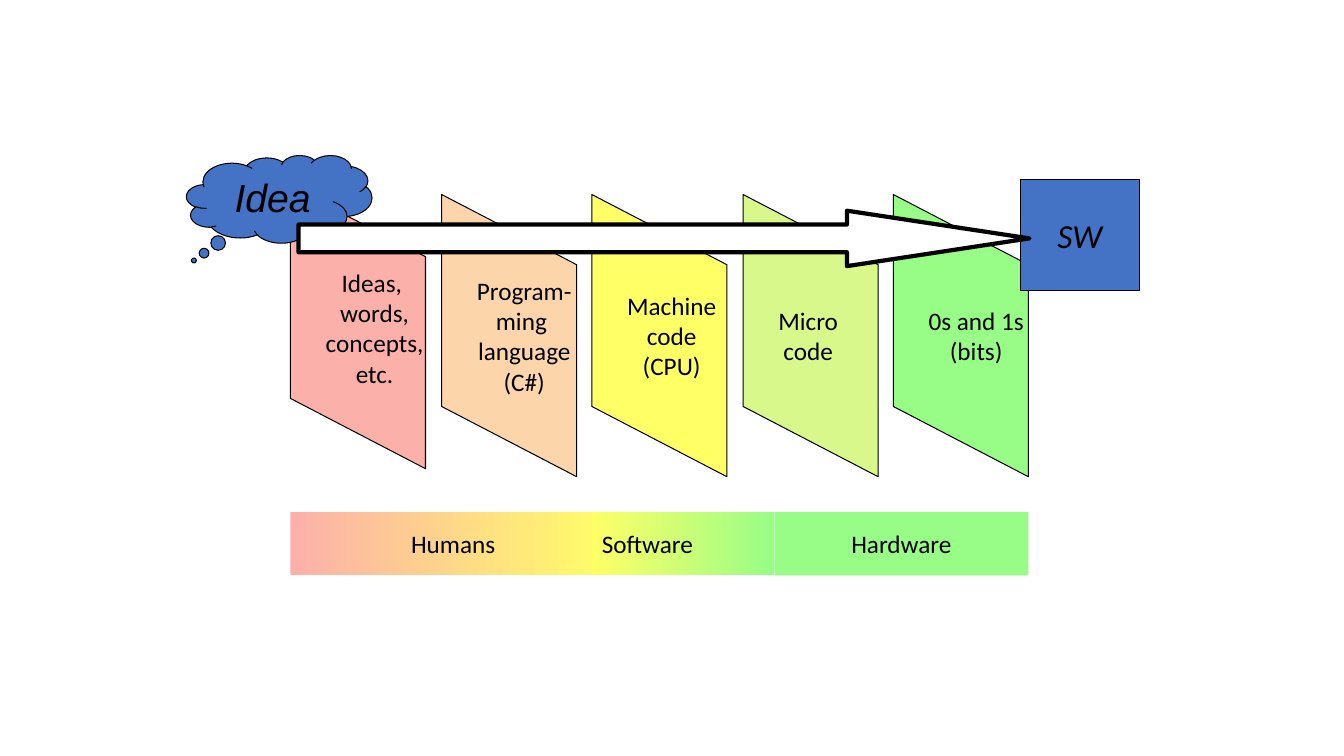
from dataclasses import dataclass

from pptx import Presentation
from pptx.dml.color import RGBColor
from pptx.enum.shapes import MSO_SHAPE
from pptx.enum.text import MSO_ANCHOR, PP_ALIGN
from pptx.util import Emu, Pt

PX = 9144  # EMU per px, 100 px to the inch

COLORS = {
    "black": "000000",
    "white": "FFFFFF",
    "blue": "4472C4",
    "red": "FCB0AA",
    "orange": "FCD5AA",
    "yellow": "FFFF66",
    "lime": "D9F88C",
    "green": "98FD87",
}


@dataclass
class Box:
    kind: MSO_SHAPE
    x: int
    y: int
    w: int
    h: int
    fill: tuple[str, ...]  # two colours make a gradient
    text: str = ""
    line: float = 0.75
    adjust: tuple[float, ...] = ()
    size: int = 18
    font: str = "Calibri"
    italic: bool = False
    align: PP_ALIGN = PP_ALIGN.CENTER
    anchor: MSO_ANCHOR = MSO_ANCHOR.MIDDLE
    wrap: bool = False


def rgb(name: str) -> RGBColor:
    return RGBColor.from_string(COLORS[name])


def paint(s, box: Box) -> None:
    if len(box.fill) == 1:
        s.fill.solid()
        s.fill.fore_color.rgb = rgb(box.fill[0])
    else:
        s.fill.gradient()
        s.fill.gradient_angle = 0
        for i, (stop, name) in enumerate(zip(s.fill.gradient_stops, box.fill)):
            stop.position = i
            stop.color.rgb = rgb(name)
    if box.line:
        s.line.color.rgb = rgb("black")
        s.line.width = Pt(box.line)
    else:
        s.line.fill.background()


def write(s, box: Box) -> None:
    tf = s.text_frame
    tf.text = box.text
    tf.word_wrap = box.wrap
    tf.vertical_anchor = box.anchor
    for p in tf.paragraphs:
        p.alignment = box.align
        for r in p.runs:
            r.font.size = Pt(box.size)
            r.font.name = box.font
            r.font.italic = box.italic
            r.font.color.rgb = rgb("black")


def draw(slide, box: Box):
    s = slide.shapes.add_shape(
        box.kind, *(Emu(v * PX) for v in (box.x, box.y, box.w, box.h)))
    s.shadow.inherit = False
    for i, value in enumerate(box.adjust):
        s.adjustments[i] = value
    paint(s, box)
    if box.text:
        write(s, box)
    return s


def draw_plate(slide, box: Box) -> None:
    """Stand a parallelogram upright and keep its text level."""
    s = draw(slide, box)
    s.rotation = 90
    body = s.text_frame._txBody.bodyPr
    body.set("vert", "eaVert")
    body.set("rot", "10800000")


LEVELS = [
    ("Ideas, \nwords,\nconcepts,\netc.", "red"),
    ("Program-\nming \nlanguage\n(C#)", "orange"),
    ("Machine\ncode\n(CPU)", "yellow"),
    ("Micro\ncode", "lime"),
    ("0s and 1s\n(bits)", "green"),
]
PLATE_X, PLATE_Y, PLATE_PITCH = 215, 266, 149.6
FIRST_PLATE_RISE = 8

FLOW = [
    Box(MSO_SHAPE.CLOUD_CALLOUT, 185, 154, 184, 87, ("blue",), "Idea",
        adjust=(-0.46, 0.7), size=28, font="Arial", italic=True,
        anchor=MSO_ANCHOR.TOP, wrap=True),
    Box(MSO_SHAPE.RECTANGLE, 1012, 178, 118, 110, ("blue",), "SW",
        size=24, italic=True),
    Box(MSO_SHAPE.RIGHT_ARROW, 296, 209, 725, 55, ("white",), line=3,
        adjust=(0.5, 3.29)),
]

BAR_Y, BAR_H = 508, 63
BARS = [
    Box(MSO_SHAPE.RECTANGLE, 288, BAR_Y, 323, BAR_H, ("red", "yellow"),
        "Humans", line=0),
    Box(MSO_SHAPE.RECTANGLE, 587, BAR_Y, 181, BAR_H, ("yellow", "green"),
        "Software", line=0, align=PP_ALIGN.LEFT),
    Box(MSO_SHAPE.RECTANGLE, 768, BAR_Y, 252, BAR_H, ("green",),
        "Hardware", line=0),
]


def main() -> None:
    prs = Presentation()
    prs.slide_width, prs.slide_height = Emu(1333 * PX), Emu(750 * PX)
    slide = prs.slides.add_slide(prs.slide_layouts[6])

    # Levels of abstraction
    for i, (text, color) in enumerate(LEVELS):
        x = PLATE_X + round(PLATE_PITCH * i)
        y = PLATE_Y - (FIRST_PLATE_RISE if i == 0 else 0)
        draw_plate(slide, Box(MSO_SHAPE.PARALLELOGRAM, x, y, 280, 134,
                              (color,), text, adjust=(0.52,)))

    # Idea, software and the arrow between, then the domain bars
    for box in FLOW + BARS:
        draw(slide, box)

    prs.save("out.pptx")


if __name__ == "__main__":
    main()
